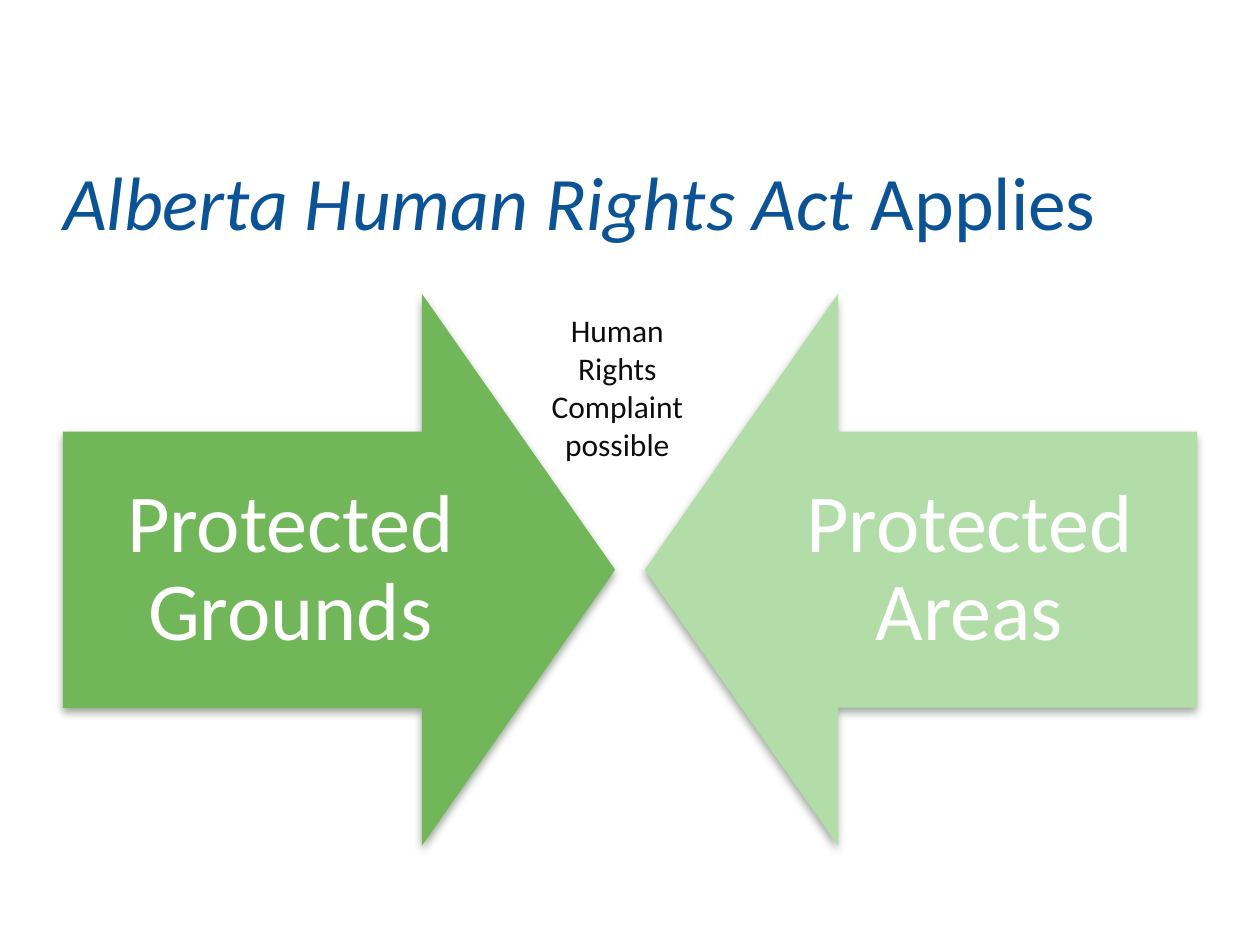
"""Build a slide with two facing arrows for protected grounds and areas."""
from dataclasses import dataclass

from lxml.etree import SubElement
from pptx import Presentation
from pptx.dml.color import RGBColor
from pptx.enum.shapes import MSO_SHAPE
from pptx.enum.text import MSO_ANCHOR, MSO_AUTO_SIZE, PP_ALIGN
from pptx.oxml.ns import qn
from pptx.shapes.autoshape import Shape
from pptx.slide import Slide
from pptx.text.text import Font
from pptx.util import Cm, Pt

SLIDE_WIDTH = 25.4
MARGIN = 1.27
ARROW_SIZE = 11.13
ARROW_TOP = 5.92
LABEL_WIDTH = 9.17
LABEL_HEIGHT = ARROW_SIZE / 2


@dataclass
class Arrow:
    label: str
    fill: str
    shadow: str
    rotation: int
    on_right: bool

    def left(self, width: float) -> float:
        return SLIDE_WIDTH - MARGIN - width if self.on_right else MARGIN


ARROWS = [
    Arrow("Protected Grounds", "71B759", "27411E", 270, False),
    Arrow("Protected Areas", "B2DCA8", "3E4E3A", 90, True),
]


def color(value: str) -> RGBColor:
    return RGBColor.from_string(value)


def style_font(font: Font, size: float, value: str) -> None:
    font.name = "Calibri"
    font.size = Pt(size)
    font.color.rgb = color(value)


def add_shadow(shape: Shape, value: str) -> None:
    shape.shadow.inherit = False
    effects = shape._element.spPr.find(qn("a:effectLst"))
    shadow = SubElement(effects, qn("a:outerShdw"), blurRad=str(Pt(4.5)),
                        dist=str(Pt(3)), dir="5400000", rotWithShape="0")
    shade = SubElement(shadow, qn("a:srgbClr"), val=value)
    SubElement(shade, qn("a:alpha"), val="48000")


def add_arrow(page: Slide, arrow: Arrow) -> None:
    shape = page.shapes.add_shape(
        MSO_SHAPE.DOWN_ARROW, Cm(arrow.left(ARROW_SIZE)), Cm(ARROW_TOP),
        Cm(ARROW_SIZE), Cm(ARROW_SIZE))
    shape.rotation = arrow.rotation
    shape.adjustments[0] = 0.5
    shape.adjustments[1] = 0.35
    shape.fill.solid()
    shape.fill.fore_color.rgb = color(arrow.fill)
    shape.line.fill.background()
    add_shadow(shape, arrow.shadow)

    box = page.shapes.add_textbox(
        Cm(arrow.left(LABEL_WIDTH)), Cm(ARROW_TOP + ARROW_SIZE / 4),
        Cm(LABEL_WIDTH), Cm(LABEL_HEIGHT))
    frame = box.text_frame
    frame.word_wrap = True
    frame.vertical_anchor = MSO_ANCHOR.MIDDLE
    frame.margin_left = frame.margin_right = Cm(0.94)
    frame.margin_top = frame.margin_bottom = Cm(0.94)
    frame.text = arrow.label
    para = frame.paragraphs[0]
    para.alignment = PP_ALIGN.CENTER
    para.line_spacing = 0.9
    style_font(para.runs[0].font, 47, "FFFFFF")


def set_title(page: Slide) -> None:
    title = page.shapes.title
    title.left, title.top = Cm(MARGIN), Cm(2.31)
    title.width, title.height = Cm(23.06), Cm(2.64)
    frame = title.text_frame
    frame.auto_size = MSO_AUTO_SIZE.NONE
    frame.vertical_anchor = MSO_ANCHOR.BOTTOM
    frame.margin_left = frame.margin_right = frame.margin_bottom = 0
    frame.margin_top = Cm(0.13)
    para = frame.paragraphs[0]
    para.alignment = PP_ALIGN.LEFT
    for text, italic in (("Alberta Human Rights Act ", True), ("Applies", False)):
        span = para.add_run()
        span.text = text
        style_font(span.font, 43.2, "0B5394")
        span.font.italic = italic


def add_note(page: Slide) -> None:
    box = page.shapes.add_textbox(Cm(10.59), Cm(6.15), Cm(3.71), Cm(3.33))
    frame = box.text_frame
    frame.word_wrap = True
    frame.auto_size = MSO_AUTO_SIZE.SHAPE_TO_FIT_TEXT
    frame.text = "Human Rights Complaint\npossible"
    for para in frame.paragraphs:
        para.alignment = PP_ALIGN.CENTER
        style_font(para.runs[0].font, 18, "0D0D0D")


def main() -> None:
    deck = Presentation()
    deck.slide_width, deck.slide_height = Cm(SLIDE_WIDTH), Cm(19.05)
    page = deck.slides.add_slide(deck.slide_layouts.get_by_name("Title Only"))
    for arrow in ARROWS:
        add_arrow(page, arrow)
    set_title(page)
    add_note(page)
    deck.save("out.pptx")


if __name__ == "__main__":
    main()
